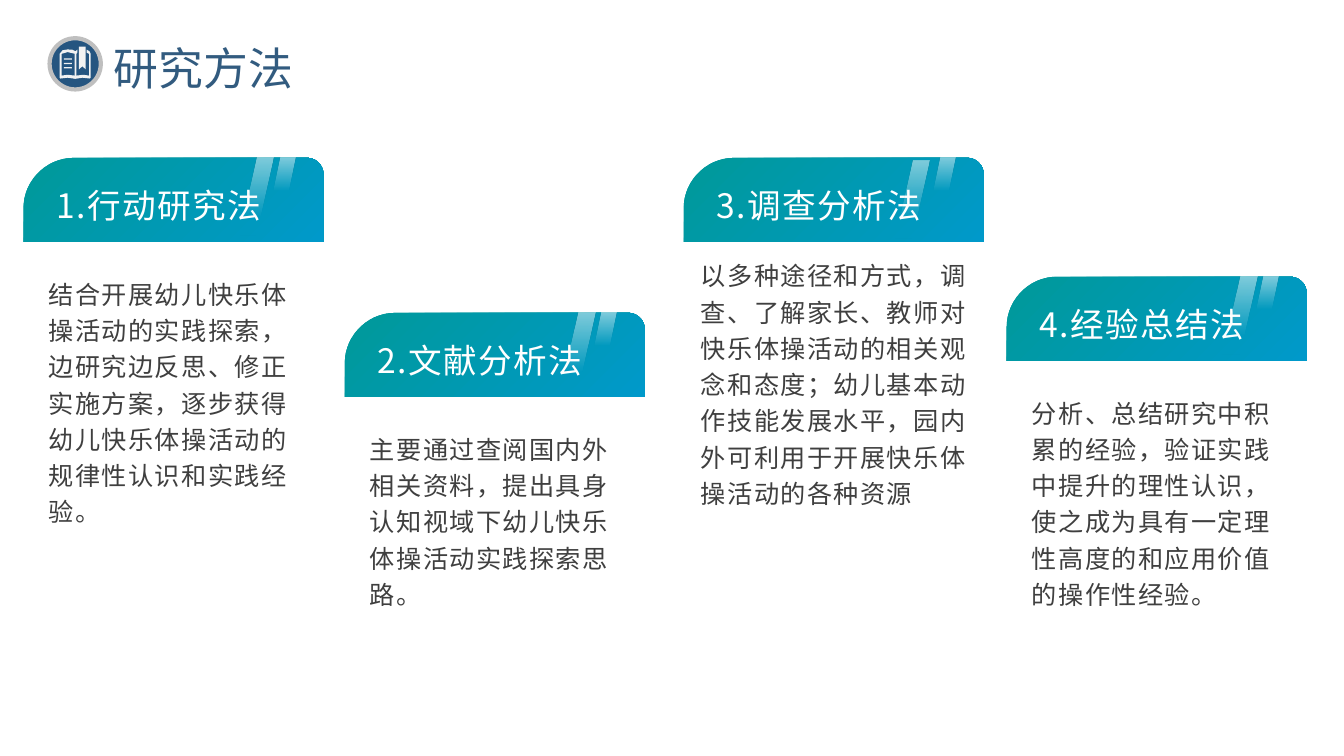
from dataclasses import dataclass
from math import cos, radians, sin

from pptx import Presentation
from pptx.dml.color import RGBColor
from pptx.enum.shapes import MSO_SHAPE as Preset
from pptx.enum.text import MSO_ANCHOR as Anchor, MSO_AUTO_SIZE as AutoSize, PP_ALIGN as Align
from pptx.oxml.ns import qn
from pptx.util import Emu, Pt

COLUMNS, ROWS = 160, 90
CELL = 76200
SANS_SC, SANS_JP, LATO = "Noto Sans CJK SC", "Noto Sans CJK JP", "Lato"
NAVY, SILVER, PAPER, WHITE, INK = "255580", "BFBFBF", "F2F2F2", "FFFFFF", "3F3F3F"
HEAD_W, HEAD_H = 35.7, 10

Point = tuple[float, float]


@dataclass(frozen=True)
class Method:
    left: float
    top: float
    heading: str
    body: str
    body_height: float
    body_dx: float = 3
    body_dy: float = 13.7
    body_width: float = 30.85
    stripe_dx: float = 25.7
    stripe_dy: float = 0


@dataclass(frozen=True)
class Stripe:
    width: float
    height: float
    slant: float
    fade_end: float


METHODS = [
    Method(2.8, 18.8, "1.行动研究法",
           "结合开展幼儿快乐体操活动的实践探索，边研究边反思、修正实施方案，"
           "逐步获得幼儿快乐体操活动的规律性认识和实践经验。", 30.5),
    Method(81.4, 18.8, "3.调查分析法",
           "以多种途径和方式，调查、了解家长、教师对快乐体操活动的相关观念和态度；"
           "幼儿基本动作技能发展水平，园内外可利用于开展快乐体操活动的各种资源",
           30.5, 2.05, 11.5, 31.8, 25.2, 0.35),
    Method(41.05, 37.25, "2.文献分析法",
           "主要通过查阅国内外相关资料，提出具身认知视域下幼儿快乐体操活动实践探索思路。", 21.85),
    Method(119.85, 32.95, "4.经验总结法",
           "分析、总结研究中积累的经验，验证实践中提升的理性认识，"
           "使之成为具有一定理性高度的和应用价值的操作性经验。", 26.15),
]
LONG_STRIPE = Stripe(4.1, 9.25, 0.505, 0.76)
SHORT_STRIPE = Stripe(3.1, 6.1, 0.413, 0.64)
SHORT_STRIPE_DX = 29.25

BOOK = [(10.3, 5.9), (10.3, 6.25), (10.6, 6.4), (10.6, 9), (9.9, 8.9), (9.1, 9),
        (9.1, 6.4), (9.2, 6.25), (9.2, 5.9), (9, 6.1), (8.6, 5.92), (8.05, 5.88),
        (7.45, 5.98), (7.1, 6.4), (7.1, 9.25), (7.2, 9.35), (8.05, 9.25), (8.95, 9.38),
        (9.85, 9.25), (10.7, 9.35), (10.8, 9.25), (10.8, 6.4), (10.65, 6.1)]
LEFT_PAGE = [(8.9, 9), (8.05, 8.9), (7.35, 9), (7.35, 6.4), (8.05, 6.2), (8.9, 6.4)]
BOOKMARK = [(9.4, 5.55), (10.2, 5.55), (10.2, 8.25), (9.8, 7.9), (9.4, 8.25)]


def cell(count: float) -> Emu:
    return Emu(round(count * CELL))


def rgb(code: str) -> RGBColor:
    return RGBColor.from_string(code)


def paint(shape, color: str) -> None:
    shape.shadow.inherit = False
    shape.fill.solid()
    shape.fill.fore_color.rgb = rgb(color)
    shape.line.fill.background()


def paint_gradient(shape, angle: float, start: str, end: str, end_at: float = 1) -> None:
    paint(shape, start)
    shape.fill.gradient()
    shape.fill.gradient_angle = angle
    for stop, color, position in zip(shape.fill.gradient_stops, (start, end), (0, end_at)):
        stop.color.rgb = rgb(color)
        stop.position = position


def set_opacities(shape, *percents: int) -> None:
    """Set the opacity of each gradient stop in turn."""
    for stop, percent in zip(shape.element.spPr.iter(qn("a:gs")), percents):
        alpha = stop[0].makeelement(qn("a:alpha"), {"val": str(percent * 1000)})
        stop[0].append(alpha)


def add_outline(slide, *contours: list[Point]):
    """Draw one closed shape; contours after the first are holes."""
    paths = [[(cell(x), cell(y)) for x, y in contour] for contour in contours]
    builder = slide.shapes.build_freeform(*paths[0][0])
    builder.add_line_segments(paths[0][1:])
    for hole in paths[1:]:
        builder.move_to(*hole[0])
        builder.add_line_segments(hole[1:])
    return builder.convert_to_shape()


def add_preset(slide, preset, left: float, top: float, width: float, height: float):
    return slide.shapes.add_shape(preset, cell(left), cell(top), cell(width), cell(height))


def corner(cx: float, cy: float, radius: float, start: int) -> list[Point]:
    """Points of a clockwise quarter circle from the start angle in degrees."""
    angles = [radians(start + step * 6) for step in range(16)]
    return [(cx + radius * cos(a), cy + radius * sin(a)) for a in angles]


def write(frame, text: str, size: float, color: str, font: str, east_asian: str,
          spacing: float, tracking: int = 0) -> None:
    frame.word_wrap = True
    frame.auto_size = AutoSize.NONE
    frame.vertical_anchor = Anchor.TOP
    paragraph = frame.paragraphs[0]
    paragraph.alignment = Align.LEFT
    paragraph.line_spacing = spacing
    run = paragraph.add_run()
    run.text = text
    run.font.size = Pt(size)
    run.font.color.rgb = rgb(color)
    run.font.name = font
    properties = run.font._element
    properties.set("spc", str(tracking * 100))
    latin = properties.find(qn("a:latin"))
    latin.addnext(latin.makeelement(qn("a:ea"), {"typeface": east_asian}))


def set_margins(frame, horizontal: float, vertical: float) -> None:
    frame.margin_left = frame.margin_right = cell(horizontal)
    frame.margin_top = frame.margin_bottom = cell(vertical)


def add_label(slide, left: float, top: float, width: float, height: float,
              text: str, size: float, color: str, font: str, east_asian: str) -> None:
    frame = slide.shapes.add_textbox(cell(left), cell(top), cell(width), cell(height)).text_frame
    set_margins(frame, 0, 0)
    write(frame, text, size, color, font, east_asian, 1.2, 1)


def add_stripe(slide, stripe: Stripe, left: float, top: float) -> None:
    glint = add_preset(slide, Preset.PARALLELOGRAM, left, top, stripe.width, stripe.height)
    glint.adjustments[0] = stripe.slant
    paint_gradient(glint, 270, WHITE, "FCFEFD", stripe.fade_end)
    set_opacities(glint, 50, 0)


def add_method(slide, method: Method) -> None:
    left, top = method.left, method.top
    right, bottom = left + HEAD_W, top + HEAD_H
    header = add_outline(slide, [(left, bottom), *corner(left + 6, top + 6, 6, 180),
                                 *corner(right - 1.95, top + 1.95, 1.95, 270), (right, bottom)])
    paint_gradient(header, 315, "009999", "0099CA")
    add_label(slide, left + 3.95, top + 2.25, 29.9, 5.75,
              method.heading, 24, WHITE, SANS_JP, SANS_JP)
    add_label(slide, left + method.body_dx, top + method.body_dy, method.body_width,
              method.body_height, method.body, 18, INK, LATO, SANS_SC)
    add_stripe(slide, LONG_STRIPE, left + method.stripe_dx, top + method.stripe_dy)
    add_stripe(slide, SHORT_STRIPE, left + SHORT_STRIPE_DX, top)


def add_book_badge(slide) -> None:
    badge = add_preset(slide, Preset.OVAL, 5.9, 4.55, 6.1, 6.1)
    paint(badge, NAVY)
    badge.line.color.rgb = rgb(SILVER)
    badge.line.width = Pt(3)
    paint(add_outline(slide, BOOKMARK), PAPER)
    for row in range(3):
        paint(add_preset(slide, Preset.ROUNDED_RECTANGLE, 7.6, 6.95 + row * 0.53, 0.95, 0.15), PAPER)
    paint(add_outline(slide, BOOK, LEFT_PAGE), PAPER)


def add_title(slide, text: str) -> None:
    title = slide.shapes.title
    title.left, title.top, title.width, title.height = map(cell, (12, 4.05, 53.4, 8.05))
    set_margins(title.text_frame, 1.55, 0.8)
    write(title.text_frame, text, 32, "325B7F", SANS_SC, SANS_SC, 1.0)


def main() -> None:
    deck = Presentation()
    deck.slide_width, deck.slide_height = cell(COLUMNS), cell(ROWS)
    slide = deck.slides.add_slide(deck.slide_layouts[5])
    add_book_badge(slide)
    add_title(slide, "研究方法")
    for method in METHODS:
        add_method(slide, method)
    deck.save("out.pptx")


if __name__ == "__main__":
    main()
